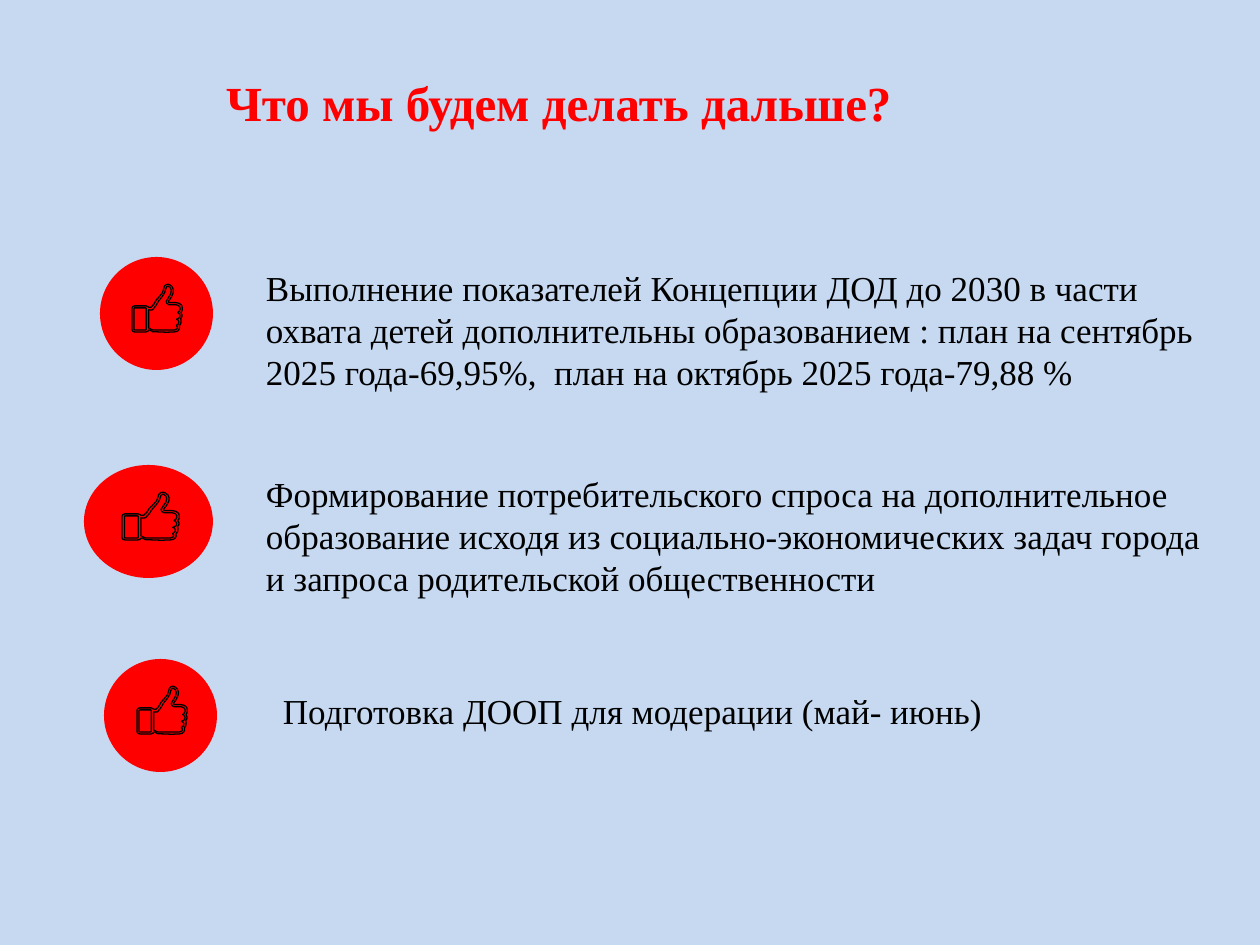
from dataclasses import dataclass

from pptx import Presentation
from pptx.dml.color import RGBColor
from pptx.enum.shapes import MSO_SHAPE
from pptx.enum.text import MSO_ANCHOR
from pptx.slide import Slide
from pptx.util import Emu, Pt

PX = 914400 / 126
INSET = 13
COLORS = {"page": "C6D9F1", "accent": "FF0000", "text": "000000"}
TITLE_FORMAT = {"name": "Times New Roman", "size": Pt(28), "bold": True}
BODY_FORMAT = {"name": "Times New Roman", "size": Pt(20), "bold": False}

# Thumbs-up contours on a grid 390 units wide and 385 units high
THUMB_GRID = (390, 385)
THUMB_CONTOURS = [
    # outer edge
    [(382, 230), (391, 215), (393, 195), (388, 172), (370, 156), (340, 149),
     (288, 149), (284, 142), (290, 132), (306, 108), (321, 75), (324, 50),
     (315, 25), (294, 6), (280, 2), (266, 6), (253, 18), (248, 38), (237, 72),
     (205, 112), (190, 128), (170, 164), (148, 188), (130, 187), (124, 181),
     (110, 176), (20, 176), (6, 182), (0, 196), (0, 365), (6, 379), (20, 385),
     (110, 385), (125, 379), (132, 370), (142, 370), (160, 383), (270, 387),
     (330, 385), (352, 380), (364, 370), (371, 354), (370, 336), (381, 318),
     (384, 297), (380, 278), (389, 265), (391, 248)],
    # cuff
    [(111, 365), (108, 369), (20, 369), (17, 365), (17, 196), (20, 192),
     (108, 192), (111, 196)],
    # inner edge
    [(368, 220), (357, 229), (366, 236), (375, 250), (373, 268), (362, 277),
     (348, 283), (359, 290), (366, 303), (363, 320), (350, 330), (347, 335),
     (354, 345), (352, 360), (330, 370), (165, 370), (150, 364), (130, 352),
     (130, 208), (155, 210), (164, 204), (187, 174), (210, 134), (235, 103),
     (255, 70), (265, 36), (271, 22), (284, 18), (300, 32), (307, 52),
     (302, 80), (274, 128), (268, 140), (272, 156), (288, 166), (340, 166),
     (363, 173), (375, 188), (376, 204)],
]


@dataclass(frozen=True)
class Area:
    left: int
    top: int
    width: int
    height: int

    def emu(self) -> list[Emu]:
        return [px(side) for side in (self.left, self.top, self.width, self.height)]


@dataclass(frozen=True)
class Label:
    text: str
    area: Area
    format: dict
    color: str = "text"
    indent: int = 0


@dataclass(frozen=True)
class Badge:
    circle: Area
    thumb: Area


LABELS = [
    Label("Что мы будем делать дальше?", Area(213, 66, 787, 72), TITLE_FORMAT, "accent"),
    Label("Выполнение показателей Концепции ДОД до 2030 в части охвата детей "
          "дополнительны образованием : план на сентябрь 2025 года-69,95%,  "
          "план на октябрь 2025 года-79,88 %",
          Area(253, 175, 983, 224), BODY_FORMAT),
    Label("Подготовка ДООП для модерации (май- июнь)",
          Area(105, 483, 1071, 255), BODY_FORMAT, indent=165),
    Label("Формирование потребительского спроса на дополнительное образование "
          "исходя из социально-экономических задач города и запроса "
          "родительской общественности",
          Area(253, 465, 983, 140), BODY_FORMAT),
]
BADGES = [
    Badge(Area(100, 257, 113, 113), Area(132, 284, 50, 48)),
    Badge(Area(84, 465, 129, 113), Area(122, 492, 57, 48)),
    Badge(Area(104, 659, 113, 113), Area(137, 686, 50, 48)),
]


def px(length: float) -> Emu:
    return Emu(round(length * PX))


def color(name: str) -> RGBColor:
    return RGBColor.from_string(COLORS[name])


def draw_label(page: Slide, label: Label) -> None:
    box = page.shapes.add_textbox(*label.area.emu())
    frame = box.text_frame
    frame.word_wrap = True
    frame.vertical_anchor = MSO_ANCHOR.BOTTOM
    frame.margin_left = px(INSET + label.indent)
    span = frame.paragraphs[0].add_run()
    span.text = label.text
    span.font.color.rgb = color(label.color)
    for attribute, value in label.format.items():
        setattr(span.font, attribute, value)


def draw_badge(page: Slide, badge: Badge) -> None:
    group = page.shapes.add_group_shape()
    circle = group.shapes.add_shape(MSO_SHAPE.OVAL, *badge.circle.emu())
    circle.line.fill.background()

    left, top, width, height = badge.thumb.emu()
    scale = (width / THUMB_GRID[0], height / THUMB_GRID[1])
    first, *others = THUMB_CONTOURS
    builder = group.shapes.build_freeform(*first[0], scale=scale)
    builder.add_line_segments(first[1:], close=True)
    for contour in others:
        builder.move_to(*contour[0])
        builder.add_line_segments(contour[1:], close=True)
    thumb = builder.convert_to_shape(left, top)
    thumb.line.color.rgb = color("text")
    thumb.line.width = Pt(0.75)

    for shape in (circle, thumb):
        shape.shadow.inherit = False
        shape.fill.solid()
        shape.fill.fore_color.rgb = color("accent")


def main() -> None:
    deck = Presentation()
    deck.slide_width, deck.slide_height = px(1260), px(945)
    page = deck.slides.add_slide(deck.slide_layouts[6])
    page.background.fill.solid()
    page.background.fill.fore_color.rgb = color("page")

    # Title and plans
    for label in LABELS:
        draw_label(page, label)

    # Thumbs-up badges
    for badge in BADGES:
        draw_badge(page, badge)

    deck.save("out.pptx")


if __name__ == "__main__":
    main()
